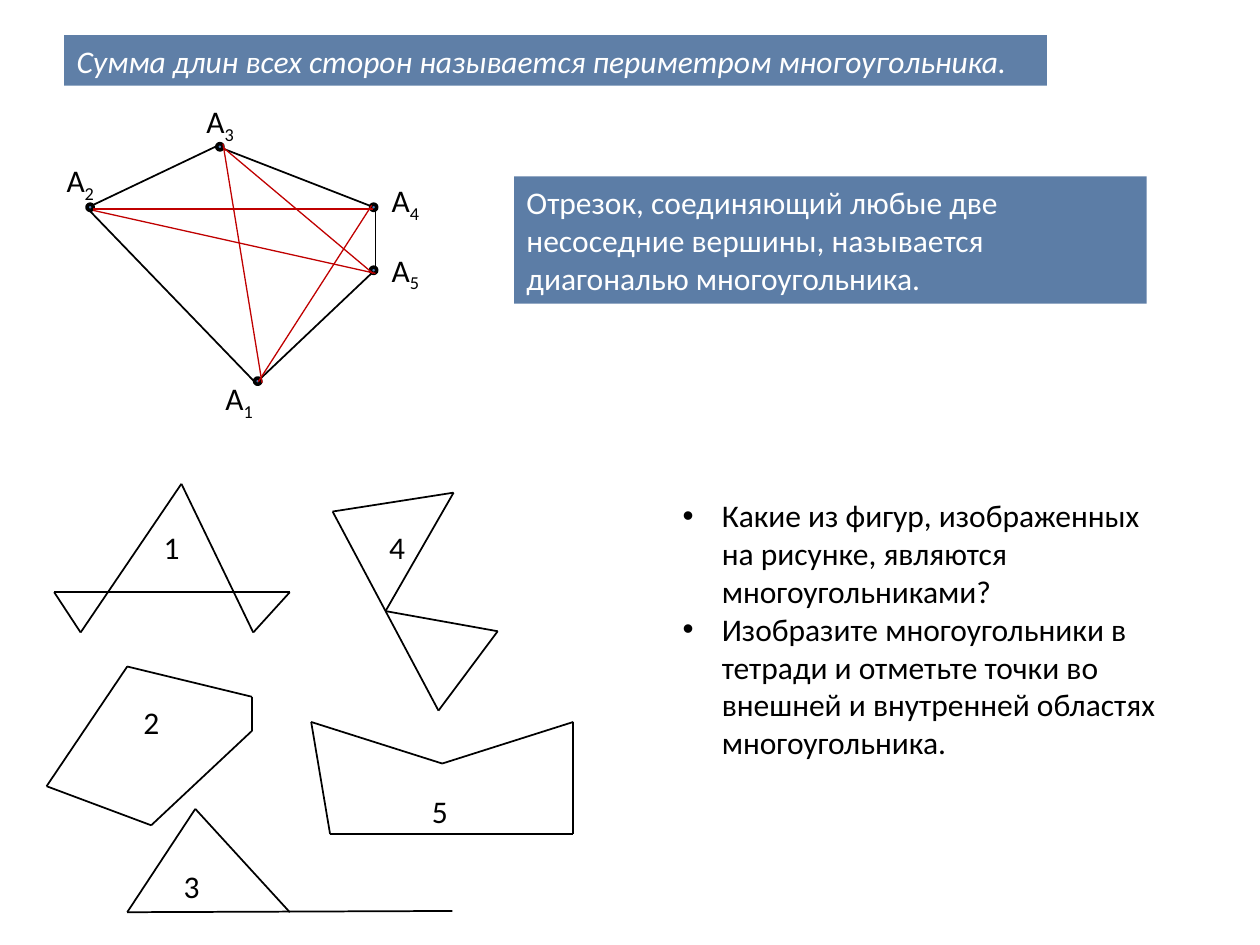
from itertools import pairwise

from lxml.etree import SubElement
from pptx import Presentation
from pptx.dml.color import RGBColor
from pptx.enum.shapes import MSO_CONNECTOR, MSO_SHAPE
from pptx.oxml.ns import qn
from pptx.util import Inches, Pt

BLACK, RED, NAVY, BLUE, WHITE = "000000", "C00000", "376092", "4F81BD", "FFFFFF"
DOT = 0.05

BANNERS = [
    ("Сумма длин всех сторон называется периметром многоугольника.",
     (0.51, 0.28, 7.8, 0.4), 80, True),
    ("Отрезок, соединяющий любые две несоседние вершины, называется "
     "диагональю многоугольника.", (4.08, 1.4, 5.02, 1.01), 81, False),
]
PENTAGON = [(2.03, 3.04), (0.69, 1.65), (1.72, 1.16), (2.98, 1.65), (2.98, 2.14)]
VERTICES = [(0.69, 1.62), (1.72, 1.14), (2.94, 1.62), (2.94, 2.12), (2.02, 3.0)]
VERTEX_LABELS = [
    ("1", (1.69, 2.96, 0.5, 0.4)),
    ("2", (0.43, 1.23, 0.5, 0.4)),
    ("3", (1.54, 0.76, 0.5, 0.4)),
    ("5", (3.01, 1.94, 0.65, 0.4)),
    ("4", (3.01, 1.39, 0.65, 0.4)),
]
DIAGONALS = [
    ((0.74, 1.66), (2.96, 1.66)),
    ((0.74, 1.67), (2.98, 2.17)),
    ((1.77, 1.14), (2.08, 3.04)),
    ((2.05, 3.03), (2.95, 1.63)),
    ((1.77, 1.17), (2.96, 2.17)),
]
CLOSED_FIGURES = [
    [(0.43, 4.7), (2.3, 4.7), (2.01, 5.02), (1.44, 3.84), (0.64, 5.02)],
    [(2.64, 4.06), (3.48, 5.64), (3.95, 5.01), (3.06, 4.85), (3.6, 3.91)],
    [(0.37, 6.24), (1.01, 5.29), (2, 5.53), (2, 5.8), (1.2, 6.55)],
    [(2.62, 6.62), (4.55, 6.62), (4.55, 5.73), (3.51, 6.06), (2.47, 5.73)],
]
OPEN_FIGURE = [(3.59, 7.23), (1.01, 7.24), (1.55, 6.42), (2.3, 7.24)]
FIGURE_NUMBERS = [
    ("1", (1.2, 4.14, 0.35, 0.4)),
    ("2", (1.04, 5.53, 0.47, 0.4)),
    ("3", (1.36, 6.83, 0.33, 0.4)),
    ("4", (2.99, 4.14, 0.34, 0.4)),
    ("5", (3.33, 6.24, 0.39, 0.4)),
]
QUESTIONS = [
    "Какие из фигур, изображенных на рисунке, являются многоугольниками?",
    "Изобразите многоугольники в тетради и отметьте точки во внешней "
    "и внутренней областях многоугольника.",
]
QUESTIONS_BOX = (5.32, 3.89, 4.02, 2.22)


def rgb(code):
    """Turn a hex string into a colour."""
    return RGBColor.from_string(code)


def style(paragraph, color=BLACK, italic=None):
    """Set the common font on a paragraph."""
    font = paragraph.font
    font.name, font.size, font.italic = "Calibri", Pt(18), italic
    font.color.rgb = rgb(color)


def add_segment(shapes, start, end, color=BLACK, width=1):
    """Draw a straight line between two points."""
    segment = shapes.add_connector(
        MSO_CONNECTOR.STRAIGHT, *(Inches(v) for v in (*start, *end)))
    segment.line.color.rgb = rgb(color)
    segment.line.width = Pt(width)
    SubElement(segment._element.spPr, qn("a:effectLst"))


def add_figure(slide, points):
    """Draw a chain of segments as one group."""
    figure = slide.shapes.add_group_shape()
    for start, end in pairwise(points):
        add_segment(figure.shapes, start, end)


def add_solid(slide, preset, box, color):
    """Add a filled preset shape without shadow."""
    solid = slide.shapes.add_shape(preset, *map(Inches, box))
    solid.shadow.inherit = False
    solid.fill.solid()
    solid.fill.fore_color.rgb = rgb(color)
    return solid


def add_banner(slide, sentence, box, opacity, italic):
    """Add a translucent bar with a sentence."""
    banner = add_solid(slide, MSO_SHAPE.RECTANGLE, box, NAVY)
    banner.line.fill.background()
    tint = banner._element.spPr.find(qn("a:solidFill"))[0]
    SubElement(tint, qn("a:alpha"), val=str(opacity * 1000))
    banner.text_frame.word_wrap = True
    paragraph = banner.text_frame.paragraphs[0]
    paragraph.text = sentence
    paragraph.alignment = 1
    style(paragraph, WHITE, italic)


def add_label(slide, text, box, subscript=""):
    """Add a short caption with an optional subscript."""
    label = slide.shapes.add_textbox(*map(Inches, box))
    label.text_frame.word_wrap = True
    paragraph = label.text_frame.paragraphs[0]
    paragraph.add_run().text = text
    style(paragraph)
    if subscript:
        index = paragraph.add_run()
        index.text = subscript
        index.font._element.set("baseline", "-25000")


def add_questions(slide):
    """Add the bulleted list of tasks."""
    frame = slide.shapes.add_textbox(*map(Inches, QUESTIONS_BOX)).text_frame
    frame.word_wrap = True
    for number, question in enumerate(QUESTIONS):
        paragraph = frame.add_paragraph() if number else frame.paragraphs[0]
        paragraph.text = question
        style(paragraph)
        properties = paragraph._p.get_or_add_pPr()
        properties.set("marL", str(Inches(0.31)))
        properties.set("indent", str(-Inches(0.31)))
        bullet_font = properties.makeelement(qn("a:buFont"), {"typeface": "Arial"})
        bullet = properties.makeelement(qn("a:buChar"), {"char": "•"})
        properties.insert(0, bullet_font)
        properties.insert(1, bullet)


def main():
    """Build the slide about polygons."""
    deck = Presentation()
    deck.slide_width, deck.slide_height = Inches(10), Inches(7.5)
    slide = deck.slides.add_slide(deck.slide_layouts[6])

    for banner in BANNERS:
        add_banner(slide, *banner)
    for corners in [PENTAGON, *CLOSED_FIGURES]:
        add_figure(slide, corners + corners[:1])
    add_figure(slide, OPEN_FIGURE)
    for vertex in VERTICES:
        dot = add_solid(slide, MSO_SHAPE.OVAL, (*vertex, DOT, DOT), BLUE)
        dot.line.color.rgb = rgb(BLACK)
        dot.line.width = Pt(2)
    for index, box in VERTEX_LABELS:
        add_label(slide, "A", box, index)
    for start, end in DIAGONALS:
        add_segment(slide.shapes, start, end, RED, 0.75)
    for number, box in FIGURE_NUMBERS:
        add_label(slide, number, box)
    add_questions(slide)
    deck.save("out.pptx")


if __name__ == "__main__":
    main()
